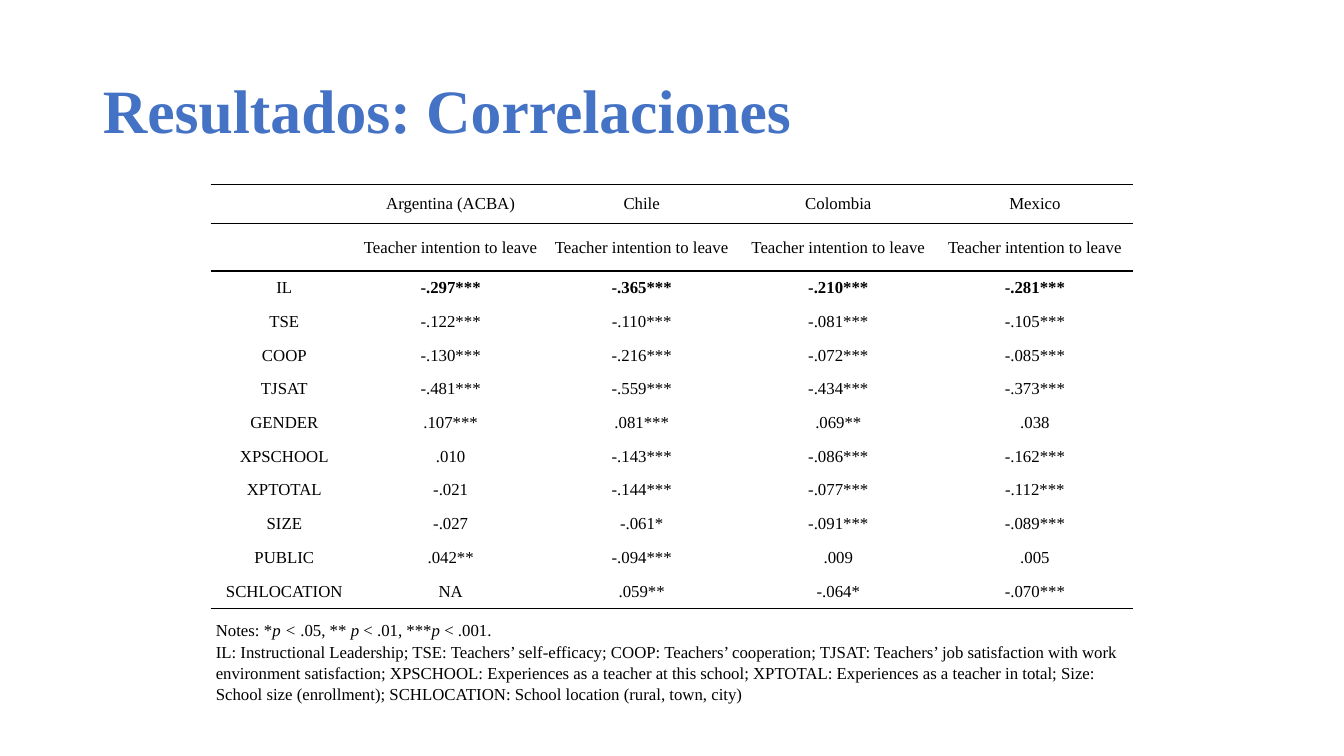
from lxml.etree import SubElement
from pptx import Presentation
from pptx.dml.color import RGBColor
from pptx.enum.text import MSO_ANCHOR, PP_ALIGN
from pptx.oxml.ns import qn
from pptx.util import Inches, Pt

FONT = "Times New Roman"
BLACK = "000000"
NO_STYLE = "{2D5ABB26-0587-4C30-8999-92F81FD0307C}"


def style(font, color, **values):
    font.color.rgb = RGBColor.from_string(color)
    for name, value in {"name": FONT, **values}.items():
        setattr(font, name, value)


def add_rule(cell, edge):
    line = SubElement(cell._tc.get_or_add_tcPr(), qn(f"a:{edge}"), w=str(Pt(1)))
    fill = SubElement(line, qn("a:solidFill"))
    SubElement(fill, qn("a:srgbClr"), val=BLACK)


deck = Presentation()
deck.slide_width, deck.slide_height = Inches(13.33), Inches(7.5)
slide = deck.slides.add_slide(deck.slide_layouts[5])

# Title
title = slide.shapes.title
for name, value in {"left": 0.92, "top": 0.4, "width": 11.5, "height": 1.45}.items():
    setattr(title, name, Inches(value))
title.text_frame.vertical_anchor = MSO_ANCHOR.MIDDLE
heading = title.text_frame.paragraphs[0]
heading.alignment = PP_ALIGN.LEFT
heading.line_spacing = 0.9
heading_run = heading.add_run()
heading_run.text = "Resultados: Correlaciones"
style(heading_run.font, "4472C4", size=Pt(44), bold=True)

# Correlations by country
correlations = [
    ["", "Argentina (ACBA)", "Chile", "Colombia", "Mexico"],
    [""] + ["Teacher intention to leave"] * 4,
    ["IL", "-.297***", "-.365***", "-.210***", "-.281***"],
    ["TSE", "-.122***", "-.110***", "-.081***", "-.105***"],
    ["COOP", "-.130***", "-.216***", "-.072***", "-.085***"],
    ["TJSAT", "-.481***", "-.559***", "-.434***", "-.373***"],
    ["GENDER", ".107***", ".081***", ".069**", ".038"],
    ["XPSCHOOL", ".010", "-.143***", "-.086***", "-.162***"],
    ["XPTOTAL", "-.021", "-.144***", "-.077***", "-.112***"],
    ["SIZE", "-.027", "-.061*", "-.091***", "-.089***"],
    ["PUBLIC", ".042**", "-.094***", ".009", ".005"],
    ["SCHLOCATION", "NA", ".059**", "-.064*", "-.070***"],
]
notes_row = len(correlations)
LEADERSHIP_ROW = 2
rules = {0: ["lnT", "lnB"], 1: ["lnT"], notes_row - 1: ["lnB"], notes_row: ["lnT"]}
column_widths = [1.46, 1.84] + [1.95] * 3
row_heights = [0.39, 0.47] + [0.335] * 10 + [1.06]

frame = slide.shapes.add_table(notes_row + 1, 5, Inches(2.09), Inches(1.83),
                               Inches(9.15), Inches(5.27))
table = frame.table
table.first_row = table.horz_banding = False
frame.element.xpath(".//a:tableStyleId")[0].text = NO_STYLE
for column, width in zip(table.columns, column_widths):
    column.width = Inches(width)
for row, height in zip(table.rows, row_heights):
    row.height = Inches(height)

cell_format = {"margin_left": Inches(0.05), "margin_right": Inches(0.05),
               "margin_top": 0, "margin_bottom": 0,
               "vertical_anchor": MSO_ANCHOR.MIDDLE}
for r, row in enumerate(table.rows):
    for c, cell in enumerate(row.cells):
        for name, value in cell_format.items():
            setattr(cell, name, value)
        for edge in rules.get(r, []):
            add_rule(cell, edge)
        cell.fill.background()
        if r < notes_row and correlations[r][c]:
            entry = cell.text_frame.paragraphs[0]
            entry.alignment = PP_ALIGN.CENTER
            run = entry.add_run()
            run.text = correlations[r][c]
            style(run.font, BLACK, size=Pt(12), bold=r == LEADERSHIP_ROW and c > 0)

# Notes: (text, italic) pieces in each paragraph
notes = [
    [("Notes: *", False), ("p < ", True), (".05, ** ", False), ("p", True),
     (" < .01, ***", False), ("p ", True), ("< .001.", False)],
    [("IL: Instructional Leadership; TSE: Teachers’ self-efficacy; "
      "COOP: Teachers’ cooperation; TJSAT: Teachers’ job satisfaction with work "
      "environment satisfaction; XPSCHOOL: Experiences as a teacher at this school; "
      "XPTOTAL: Experiences as a teacher in total; Size: School size (enrollment); "
      "SCHLOCATION: School location (rural, town, city)", False)],
]
notes_cell = table.cell(notes_row, 0)
notes_cell.merge(table.cell(notes_row, 4))
notes_cell.text_frame.add_paragraph()
for paragraph, pieces in zip(notes_cell.text_frame.paragraphs, notes):
    paragraph.line_spacing = 1.15
    for text, italic in pieces:
        run = paragraph.add_run()
        run.text = text
        style(run.font, BLACK, size=Pt(12), italic=italic)

deck.save("out.pptx")
